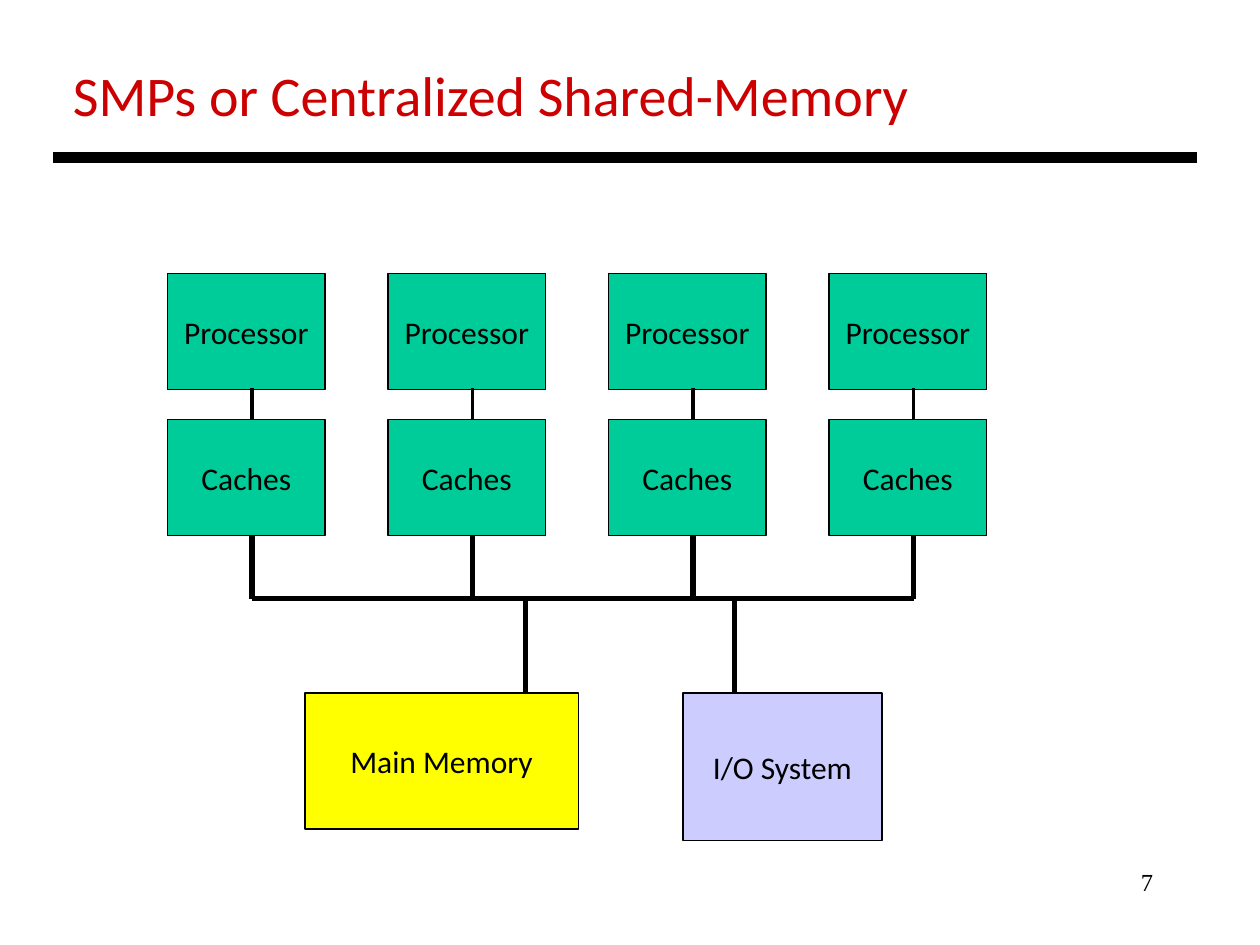
"""Build a slide showing a centralized shared-memory multiprocessor."""
from lxml import etree
from pptx import Presentation
from pptx import util as u
from pptx.dml.color import RGBColor
from pptx.enum import shapes, text
from pptx.oxml.ns import qn

BLACK = "000000"
GREEN = "00CC99"


def rgb(value):
    """Turn a hex string into a colour."""
    return RGBColor.from_string(value)


def write(sp, words, size, align, color=BLACK, font="Calibri", wrap=False):
    """Put one formatted paragraph into a shape."""
    tf = sp.text_frame
    tf.word_wrap = wrap
    p = tf.paragraphs[0]
    p.text = words
    p.alignment = align
    p.font.size = u.Pt(size)
    p.font.name = font
    p.font.color.rgb = rgb(color)
    return tf


def add_label(s, words, x, y, w, h, size, align, **style):
    """Add a text box."""
    sp = s.shapes.add_textbox(*map(u.Inches, (x, y, w, h)))
    return write(sp, words, size, align, **style)


def add_box(s, words, x, y, w, h, fill):
    """Add an outlined rectangle with centred text."""
    sp = s.shapes.add_shape(shapes.MSO_SHAPE.RECTANGLE, *map(u.Inches, (x, y, w, h)))
    sp.shadow.inherit = False
    sp.fill.solid()
    sp.fill.fore_color.rgb = rgb(fill)
    sp.line.color.rgb = rgb(BLACK)
    sp.line.width = u.Pt(0.75)
    tf = write(sp, words, 18, text.PP_ALIGN.CENTER)
    tf.vertical_anchor = text.MSO_ANCHOR.MIDDLE


def add_line(s, x1, y1, x2, y2, width=3):
    """Add a straight black line without a shadow."""
    ends = map(u.Inches, (x1, y1, x2, y2))
    sp = s.shapes.add_connector(shapes.MSO_CONNECTOR.STRAIGHT, *ends)
    sp.line.color.rgb = rgb(BLACK)
    sp.line.width = u.Pt(width)
    etree.SubElement(sp._element.spPr, qn("a:effectLst"))


def add_node(s, x, bus_y):
    """Add a processor above its caches, wired down to the bus."""
    wire_x = x + 0.67
    add_box(s, "Processor", x, 2.17, 1.25, 0.92, GREEN)
    add_box(s, "Caches", x, 3.33, 1.25, 0.92, GREEN)
    add_line(s, wire_x, 3.08, wire_x, 3.33, 2.25)
    add_line(s, wire_x, 4.25, wire_x, bus_y)


def main():
    """Build and save the slide."""
    prs = Presentation()
    prs.slide_width, prs.slide_height = u.Inches(10), u.Inches(7.5)
    s = prs.slides.add_slide(prs.slide_layouts[6])

    add_label(s, "7", 7.17, 6.83, 2.08, 0.5, 14, text.PP_ALIGN.RIGHT,
              font="Times New Roman", wrap=True)
    tf = add_label(s, "SMPs or Centralized Shared-Memory", 0.48, 0.43, 6.9, 0.64,
                   32, text.PP_ALIGN.LEFT, color="CC0000")
    tf.auto_size = text.MSO_AUTO_SIZE.SHAPE_TO_FIT_TEXT
    add_line(s, 0.42, 1.25, 9.5, 1.25, 6)

    bus_y = 4.75
    for i in range(4):
        add_node(s, 1.33 + 1.75 * i, bus_y)
    add_line(s, 2, bus_y, 7.25, bus_y)

    add_box(s, "Main Memory", 2.42, 5.5, 2.17, 1.08, "FFFF00")
    add_box(s, "I/O System", 5.42, 5.5, 1.58, 1.17, "CCCCFF")
    for x in (4.17, 5.83):
        add_line(s, x, bus_y, x, 5.5)

    prs.save("out.pptx")


if __name__ == "__main__":
    main()
